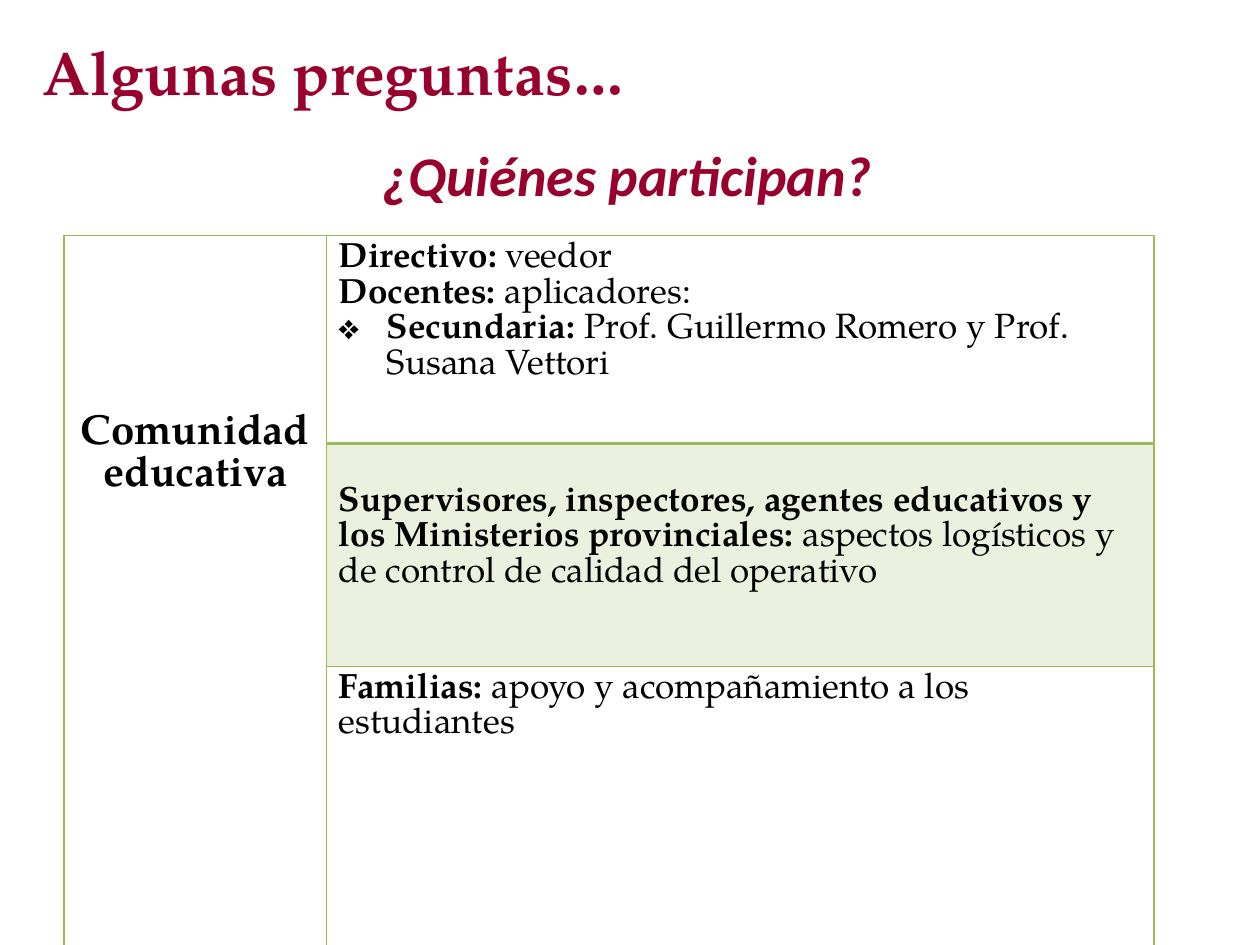
from pptx import Presentation
from pptx.dml.color import RGBColor
from pptx.enum.text import PP_ALIGN
from pptx.oxml import parse_xml
from pptx.oxml.ns import nsdecls
from pptx.util import Inches, Pt

CENTER, LEFT = PP_ALIGN.CENTER, PP_ALIGN.LEFT
SERIF, SANS = "TeX Gyre Pagella", "Calibri"
WINE, GREEN, PALE, BLACK, WHITE = "98012E", "9BBB59", "EBF1DE", "000000", "FFFFFF"

HEADINGS = [
    ("Algunas preguntas…", (0.24, 0.22, 9.49, 0.69), 35, SERIF, False, LEFT),
    ("¿Quiénes participan?", (0.29, 1.07, 9.38, 0.7), 32, SANS, True, CENTER),
]
COMMUNITY = [[("Comunidad educativa", True)]]
ROLES = [
    [
        [("Directivo: ", True), ("veedor", False)],
        [("Docentes: ", True), ("aplicadores:", False)],
        [("Secundaria:", True), (" Prof. Guillermo Romero y Prof. Susana Vettori", False)],
    ],
    [[("Supervisores, inspectores, agentes educativos y los Ministerios provinciales: ", True),
      ("aspectos logísticos y de control de calidad del operativo", False)]],
    [[("Familias:", True), (" apoyo y acompañamiento a los estudiantes", False)]],
]
BULLETED = "Secundaria:"
COLS = [2.08, 6.57]
ROWS = [1.65, 1.77, 2.3]
FILLS = [WHITE, PALE, WHITE]
INSET = 0.05
LEADING = 1.015


def rgb(value):
    return RGBColor.from_string(value)


def add_run(p, text, size, font, color, bold, italic=False):
    r = p.add_run()
    r.text = text
    r.font.size, r.font.name = Pt(size), font
    r.font.bold, r.font.italic = bold, italic
    r.font.color.rgb = rgb(color)


def add_bullet(p):
    pPr = p._p.get_or_add_pPr()
    pPr.set("marL", str(Inches(0.38)))
    pPr.set("indent", str(-Inches(0.38)))
    pPr.append(parse_xml(f'<a:buChar {nsdecls("a")} char="❖"/>'))


def fill_text(cell, paragraphs, size, align, lines_above):
    line = size * LEADING
    cell.margin_top = Inches(INSET) + Pt(line * lines_above)
    tf = cell.text_frame
    for i, runs in enumerate(paragraphs):
        p = tf.add_paragraph() if i else tf.paragraphs[0]
        p.alignment, p.line_spacing = align, Pt(line)
        if runs[0][0] == BULLETED:
            add_bullet(p)
        for text, bold in runs:
            add_run(p, text, size, SERIF, BLACK, bold)


def set_borders(cell, widths):
    tcPr = cell._tc.get_or_add_tcPr()
    for i, (side, width) in enumerate(zip("LRTB", widths)):
        tcPr.insert(i, parse_xml(
            f'<a:ln{side} {nsdecls("a")} w="{Pt(width)}"><a:solidFill>'
            f'<a:srgbClr val="{GREEN}"/></a:solidFill></a:ln{side}>'))


prs = Presentation()
prs.slide_width, prs.slide_height = Inches(10), Inches(7.5)
s = prs.slides.add_slide(prs.slide_layouts[6])

for text, box, size, font, italic, align in HEADINGS:
    tf = s.shapes.add_textbox(*map(Inches, box)).text_frame
    tf.word_wrap = True
    p = tf.paragraphs[0]
    p.alignment = align
    add_run(p, text, size, font, WINE, True, italic)

table = s.shapes.add_table(len(ROWS), len(COLS), Inches(0.51), Inches(1.87),
                           Inches(sum(COLS)), Inches(sum(ROWS))).table
for column, width in zip(table.columns, COLS):
    column.width = Inches(width)
for row, height in zip(table.rows, ROWS):
    row.height = Inches(height)

table.cell(0, 0).merge(table.cell(len(ROWS) - 1, 0))
fill_text(table.cell(0, 0), COMMUNITY, 24, CENTER, 4)
for i, (paragraphs, color) in enumerate(zip(ROLES, FILLS)):
    side, role = table.cell(i, 0), table.cell(i, 1)
    fill_text(role, paragraphs, 20, LEFT, 1 if i == 1 else 0)
    for cell, fill in ((side, WHITE), (role, color)):
        cell.fill.solid()
        cell.fill.fore_color.rgb = rgb(fill)
    set_borders(side, (1, 1, 1, 1))
    set_borders(role, (1, 1, 2 if i == 1 else 1, 2 if i == 0 else 1))

prs.save("out.pptx")
